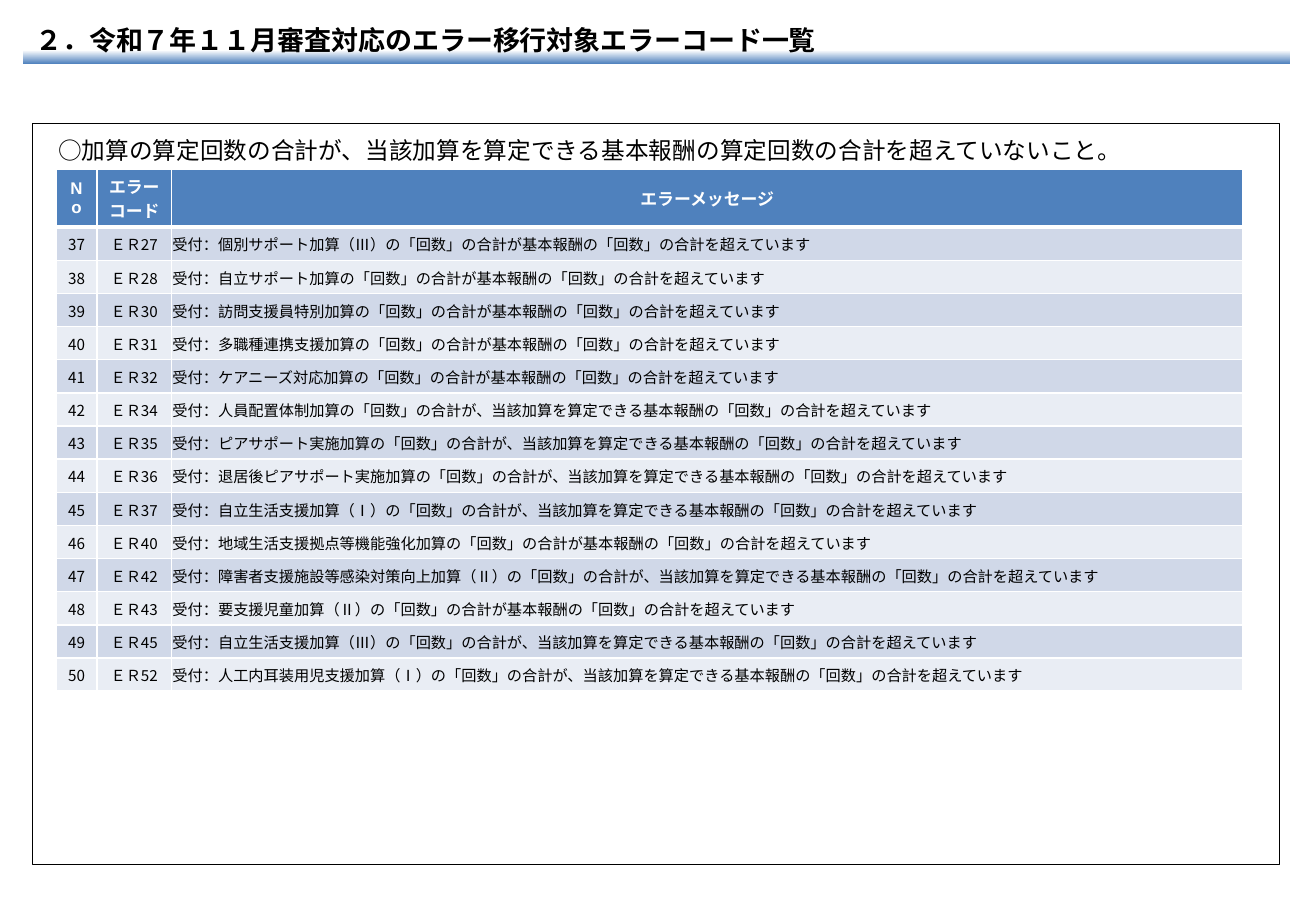
from lxml.etree import SubElement
from pptx import Presentation
from pptx.dml.color import RGBColor
from pptx.enum.shapes import MSO_SHAPE as Shape
from pptx.enum.text import MSO_ANCHOR as Anchor, MSO_AUTO_SIZE as AutoSize, PP_ALIGN as Align
from pptx.oxml.ns import qn
from pptx.util import Inches, Pt

JP, TC = "Noto Sans CJK JP", "Noto Sans CJK TC"
BLACK, WHITE, BLUE = "000000", "FFFFFF", "4F81BD"
BANDS = ["D0D8E8", "E9EDF4"]

TITLE = [("２．", JP), ("令和", TC), ("７", JP), ("年１", TC), ("１", JP),
         ("月審査対応", TC), ("のエラー移行対象エラーコード一覧", JP)]
RULE = [("○", "Arial"),
        ("加算の算定回数の合計が、当該加算を算定できる基本報酬の算定回数の合計を超えていないこと。", JP)]
HEADERS = [("No", "Arial"), ("エラー\nコード", "Arial"), ("エラーメッセージ", "Calibri")]
ANY_BASE, OWN_BASE = "", "、当該加算を算定できる"
FIRST_NUMBER = 37
ERRORS = [
    (27, "個別サポート加算（Ⅲ）", ANY_BASE),
    (28, "自立サポート加算", ANY_BASE),
    (30, "訪問支援員特別加算", ANY_BASE),
    (31, "多職種連携支援加算", ANY_BASE),
    (32, "ケアニーズ対応加算", ANY_BASE),
    (34, "人員配置体制加算", OWN_BASE),
    (35, "ピアサポート実施加算", OWN_BASE),
    (36, "退居後ピアサポート実施加算", OWN_BASE),
    (37, "自立生活支援加算（Ⅰ）", OWN_BASE),
    (40, "地域生活支援拠点等機能強化加算", ANY_BASE),
    (42, "障害者支援施設等感染対策向上加算（Ⅱ）", OWN_BASE),
    (43, "要支援児童加算（Ⅱ）", ANY_BASE),
    (45, "自立生活支援加算（Ⅲ）", OWN_BASE),
    (52, "人工内耳装用児支援加算（Ⅰ）", OWN_BASE),
]


def color(value):
    """Turn a hex string into a colour."""
    return RGBColor.from_string(value)


def place(item, box):
    """Move an item to a box of left, top, width and height in inches."""
    item.left, item.top, item.width, item.height = map(Inches, box)


def add_span(para, text, font=JP, size=9, ink=BLACK, bold=False):
    """Add one formatted run, with a matching East Asian font."""
    span = para.add_run()
    span.text = text
    span.font.name, span.font.size, span.font.bold = font, Pt(size), bold
    span.font.color.rgb = color(ink)
    east = font if font in (JP, TC) else JP
    SubElement(span.font._element, qn("a:ea")).set("typeface", east)


def write_line(frame, spans, **style):
    """Fill a text frame with one line of runs in several fonts."""
    frame.auto_size = AutoSize.NONE
    frame.word_wrap = True
    para = frame.paragraphs[0]
    para.alignment, para.space_before = Align.LEFT, Pt(0)
    for text, font in spans:
        add_span(para, text, font=font, **style)


def add_title(page, box):
    """Place the title over a band that fades upwards from blue."""
    title = page.shapes.title
    place(title, box)
    title.fill.gradient()
    title.fill.gradient_angle = 90
    for stop, position, shade in zip(title.fill.gradient_stops, (0.01, 0.29), (BLUE, WHITE)):
        stop.position, stop.color.rgb = position, color(shade)
    title.text_frame.vertical_anchor = Anchor.MIDDLE
    write_line(title.text_frame, TITLE, size=16, bold=True)


def set_borders(cell, top=1, bottom=1):
    """Draw white cell borders of the given widths in points."""
    props = cell._tc.get_or_add_tcPr()
    for side, width in (("L", 1), ("R", 1), ("T", top), ("B", bottom)):
        line = SubElement(props, qn(f"a:ln{side}"), w=str(Pt(width)))
        SubElement(SubElement(line, qn("a:solidFill")), qn("a:srgbClr"), val=WHITE)


def fill_cell(cell, text, fill, margins, align=Align.CENTER, top=1, bottom=1, **style):
    """Write and format one table cell."""
    set_borders(cell, top, bottom)
    cell.fill.solid()
    cell.fill.fore_color.rgb = color(fill)
    cell.vertical_anchor = Anchor.MIDDLE
    cell.margin_left, cell.margin_top, cell.margin_right, cell.margin_bottom = map(Inches, margins)
    for index, line in enumerate(text.split("\n")):
        frame = cell.text_frame
        para = frame.add_paragraph() if index else frame.paragraphs[0]
        para.alignment = align
        add_span(para, line, **style)


def add_error_table(page, box, header_height=0.47):
    """Place the table of error codes and messages."""
    table = page.shapes.add_table(len(ERRORS) + 1, len(HEADERS), *map(Inches, box)).table
    for column, width in zip(table.columns, (0.34, 0.61, box[2] - 0.95)):
        column.width = Inches(width)
    for row in table.rows:
        row.height = Inches((box[3] - header_height) / len(ERRORS))
    table.rows[0].height = Inches(header_height)
    for column, (text, font) in enumerate(HEADERS):
        fill_cell(table.cell(0, column), text, BLUE, (0.08, 0.04, 0.08, 0.04),
                  bottom=3, font=font, size=10, ink=WHITE, bold=True)
    for index, (code, name, base) in enumerate(ERRORS):
        message = f"受付：{name}の「回数」の合計が{base}基本報酬の「回数」の合計を超えています"
        texts = (str(FIRST_NUMBER + index), f"ＥＲ{code}", message)
        for column, text in enumerate(texts):
            fill_cell(table.cell(index + 1, column), text, BANDS[index % 2],
                      (0.01, 0.01, 0.01, 0), top=1 if index else 3,
                      align=Align.LEFT if column == 2 else Align.CENTER)


def add_panel(page, box):
    """Place the outlined panel with its rule and error table."""
    left, top, width, height = box
    panel = page.shapes.add_shape(Shape.RECTANGLE, *map(Inches, box))
    panel.shadow.inherit = False
    panel.fill.background()
    panel.line.color.rgb, panel.line.width = color(BLACK), Pt(0.75)
    rule = page.shapes.add_textbox(*map(Inches, (left + 0.11, top + 0.05, width - 0.01, 0.9)))
    write_line(rule.text_frame, RULE, size=14)
    add_error_table(page, (left + 0.19, top + 0.37, 9.77, 4.29))


def main():
    """Build and save the deck."""
    deck = Presentation()
    deck.slide_width, deck.slide_height = Inches(10.83), Inches(7.5)
    page = deck.slides.add_slide(deck.slide_layouts[5])
    add_title(page, (0.19, 0.13, 10.43, 0.4))
    add_panel(page, (0.27, 1.02, 10.26, 6.1))
    deck.save("out.pptx")


if __name__ == "__main__":
    main()
